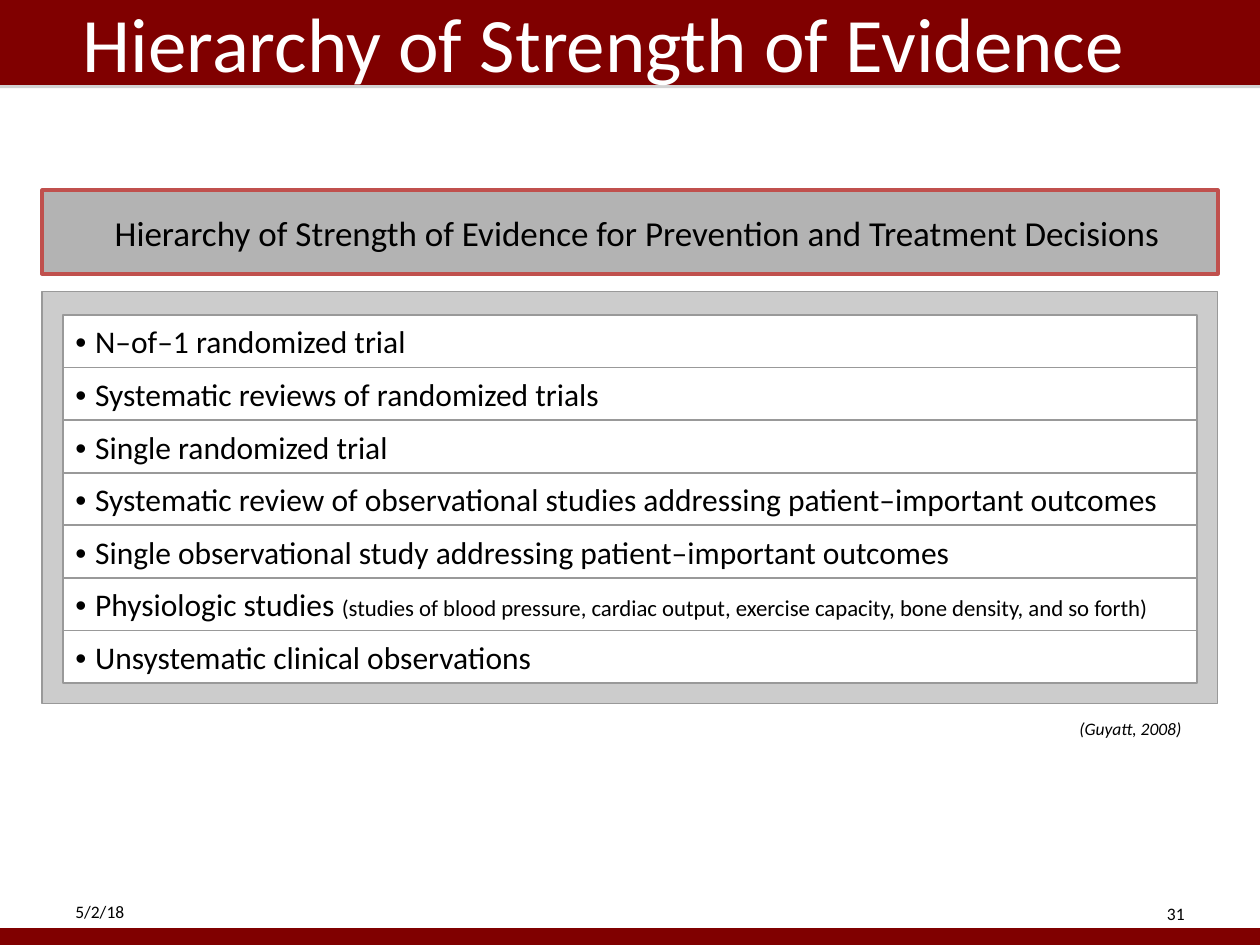
"""Build a slide that ranks kinds of clinical evidence by strength."""
from typing import NamedTuple

from lxml.etree import SubElement as Sub
from pptx import Presentation
from pptx.dml.color import RGBColor as Rgb
from pptx.enum.shapes import MSO_SHAPE as Kind
from pptx.enum.text import MSO_ANCHOR as Anchor, MSO_AUTO_SIZE as Fit, PP_ALIGN as Align
from pptx.oxml.ns import qn
from pptx.util import Cm, Pt

HUES = {"maroon": "800000", "white": "FFFFFF", "black": "000000", "shade": "808080",
        "head": "B3B3B3", "rim": "C0504D", "frame": "CCCCCC", "edge": "999999"}
ROW_TOP, ROW_STEP = 6.35, 1.06


class Run(NamedTuple):
    text: str
    size: float
    font: str = "Calibri"
    hue: str = "black"
    slant: bool = False


class Box(NamedTuple):
    left: float
    top: float
    width: float
    height: float
    fill: str
    line: str
    weight: float


class Note(NamedTuple):
    left: float
    top: float
    width: float
    height: float
    run: Run
    align: Align = Align.LEFT
    wrap: bool = True


BARS = [Box(0, 0, 25.4, 1.7, "maroon", "maroon", 0.75),
        Box(0, 18.72, 25.4, 0.33, "maroon", "maroon", 0.75)]
HEAD = Box(0.85, 3.84, 23.7, 1.68, "head", "rim", 2.25)
FRAME = Box(0.85, 5.88, 23.7, 8.3, "frame", "edge", 0.75)
ROWS = [
    ("N–of–1 randomized trial", ""),
    ("Systematic reviews of randomized trials", ""),
    ("Single randomized trial", ""),
    ("Systematic review of observational studies addressing patient–important outcomes", ""),
    ("Single observational study addressing patient–important outcomes", ""),
    ("Physiologic studies ", "(studies of blood pressure, cardiac output, "
     "exercise capacity, bone density, and so forth)"),
    ("Unsystematic clinical observations", ""),
]
NOTES = [
    Note(18.21, 18.08, 5.92, 1.02, Run("31", 10), Align.RIGHT),
    Note(21.51, 14.35, 2.69, 0.69, Run("(Guyatt, 2008)", 10, slant=True), wrap=False),
    Note(1.27, 18.03, 5.92, 1.02, Run("5/2/18", 10)),
]


def tint(name: str) -> Rgb:
    """Return the named colour."""
    return Rgb.from_string(HUES[name])


def write(frame, runs: list[Run], align: Align = Align.LEFT) -> None:
    """Add the runs to the first paragraph of a text frame."""
    para = frame.paragraphs[0]
    para.alignment = align
    for item in runs:
        run = para.add_run()
        run.text = item.text
        run.font.size = Pt(item.size)
        run.font.name = item.font
        run.font.italic = item.slant
        run.font.color.rgb = tint(item.hue)


def draw_box(slide, box: Box):
    """Draw a flat rectangle with middle text."""
    shape = slide.shapes.add_shape(Kind.RECTANGLE, *map(Cm, box[:4]))
    shape.shadow.inherit = False
    shape.fill.solid()
    shape.fill.fore_color.rgb = tint(box.fill)
    shape.line.color.rgb = tint(box.line)
    shape.line.width = Pt(box.weight)
    shape.text_frame.word_wrap = True
    shape.text_frame.vertical_anchor = Anchor.MIDDLE
    return shape


def add_shade(shape) -> None:
    """Give a shape a hard shadow just below it."""
    glow = shape.element.spPr.find(qn("a:effectLst"))
    drop = Sub(glow, qn("a:outerShdw"), blurRad="0", dist=str(Pt(1.8)),
               dir="5400000", rotWithShape="0")
    hue = Sub(drop, qn("a:srgbClr"), val=HUES["shade"])
    Sub(hue, qn("a:alpha"), val="35000")


def draw_note(slide, note: Note) -> None:
    """Draw a small text box."""
    frame = slide.shapes.add_textbox(*map(Cm, note[:4])).text_frame
    frame.word_wrap = note.wrap
    write(frame, [note.run], note.align)


def draw_title(slide) -> None:
    """Place the title on top of the bars."""
    title = slide.shapes.title
    title.left, title.top, title.width, title.height = map(Cm, (1.07, 0, 23.06, 1.7))
    frame = title.text_frame
    frame.auto_size = Fit.NONE
    frame.word_wrap = True
    frame.vertical_anchor = Anchor.MIDDLE
    frame.margin_left = Cm(0.6)
    write(frame, [Run("Hierarchy of Strength of Evidence", 44, hue="white")])
    for box in BARS:
        bar = draw_box(slide, box)
        add_shade(bar)
        title.element.addprevious(bar.element)


def main() -> None:
    """Build and save the slide."""
    deck = Presentation()
    deck.slide_width, deck.slide_height = Cm(25.4), Cm(19.05)
    slide = deck.slides.add_slide(deck.slide_layouts[5])
    draw_title(slide)
    head = draw_box(slide, HEAD).text_frame
    head.margin_left = Cm(0.54)
    write(head, [Run("Hierarchy of Strength of Evidence for Prevention and "
                     "Treatment Decisions", 20)], Align.CENTER)
    draw_box(slide, FRAME)
    for rank, (text, aside) in enumerate(ROWS):
        top = ROW_TOP + rank * ROW_STEP
        row = draw_box(slide, Box(1.27, top, 22.86, ROW_STEP, "white", "edge", 1))
        runs = [Run("• ", 18, "Arial"), Run(text, 18)]
        if aside:
            runs.append(Run(aside, 13))
        write(row.text_frame, runs)
    for note in NOTES:
        draw_note(slide, note)
    deck.save("out.pptx")


if __name__ == "__main__":
    main()
